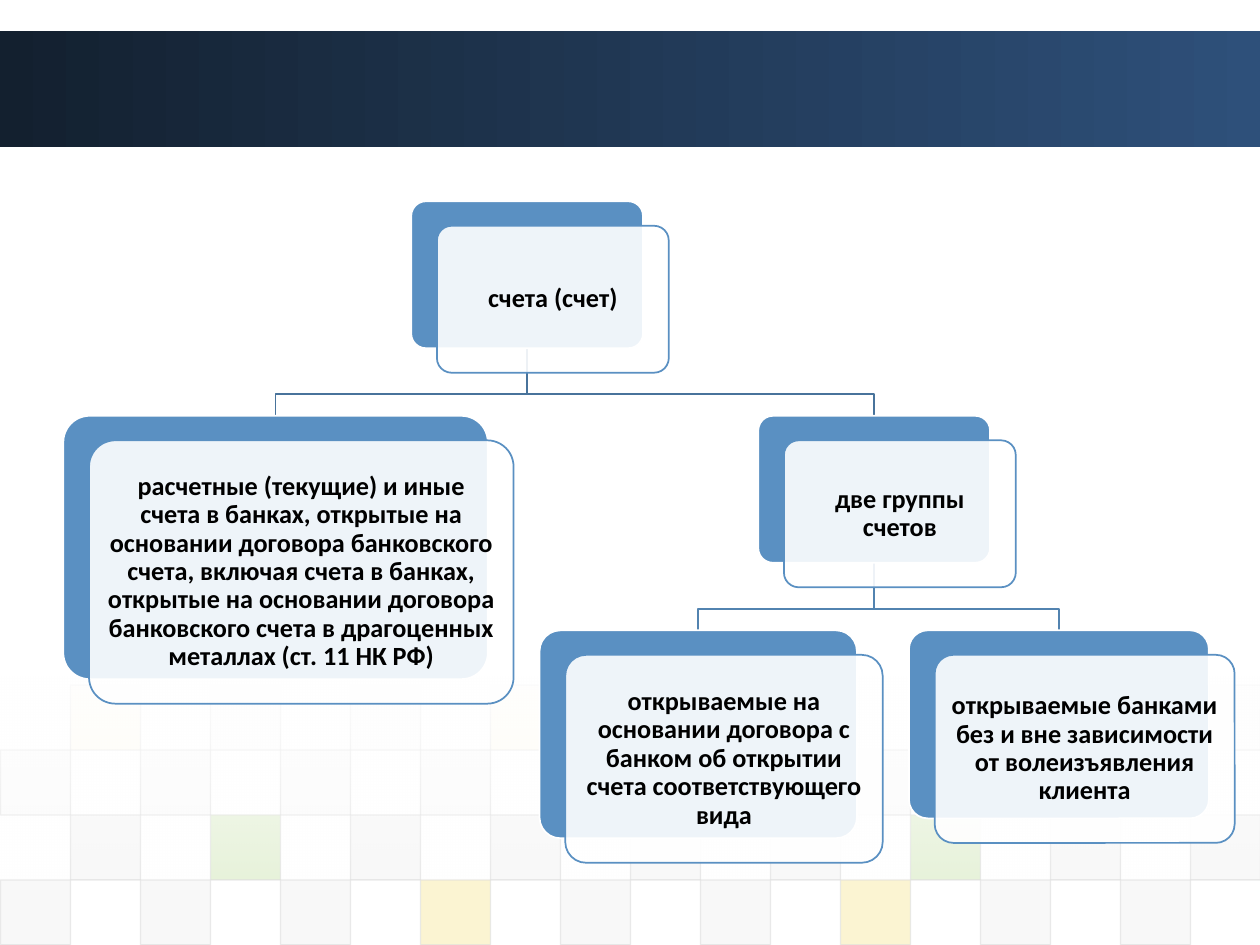
import pptx
import pptx.dml.color
import pptx.enum.shapes
import pptx.enum.text
import pptx.oxml.ns
import pptx.util
from lxml import etree

Pt = pptx.util.Pt
qn = pptx.oxml.ns.qn
SHAPES = pptx.enum.shapes.MSO_SHAPE

COLORS = {
    "banner_dark": "13202F", "banner_light": "2E507A",
    "gray": "DDDDDD", "pale": "EAEAEA", "green": "8AC246", "yellow": "EFC821",
    "white": "FFFFFF", "black": "000000", "blue": "5A90C2",
    "upper_link": "48739B", "lower_link": "5283B0",
}

# Background tiles: top, opacity, usual colour, columns, colours of special columns
TILE_WIDTH, TILE_HEIGHT = 40, 37.1
TILE_ROWS = [
    (391.5, 5, "pale", (1, 3, 5, 7, 13, 17), {1: "yellow", 7: "yellow"}),
    (428.6, 10, "gray", (0, 2, 4, 6, 12), {}),
    (465.7, 20, "gray", range(1, 18, 2), {3: "green", 13: "green"}),
    (502.8, 20, "gray", range(0, 17, 2), {6: "yellow", 12: "yellow"}),
]

# Cards: left, top, width, height of the back plate, and the wording
CARDS = {
    "accounts": (235, 115, 132.5, 84, "счета (счет)"),
    "settlement": (36.2, 237.6, 242.6, 150.5,
                   "расчетные (текущие) и иные счета в банках, открытые на основании "
                   "договора банковского счета, включая счета в банках, открытые на "
                   "основании договора банковского счета в драгоценных металлах "
                   "(ст. 11 НК РФ)"),
    "groups": (433.3, 237.6, 132.5, 84, "две группы счетов"),
    "by_contract": (308.3, 360.2, 181.4, 118.8,
                    "открываемые на основании договора с банком об открытии счета "
                    "соответствующего вида"),
    "by_bank": (519.4, 360.2, 171.4, 107.5,
                "открываемые банками без и вне зависимости от волеизъявления клиента"),
}
LINKS = [
    ("groups", "by_bank", "lower_link"),
    ("groups", "by_contract", "lower_link"),
    ("accounts", "groups", "upper_link"),
    ("accounts", "settlement", "upper_link"),
]
CARD_SHIFT = (14.7, 14)
BEND_GAP = 12.25


def rgb(name):
    return pptx.dml.color.RGBColor.from_string(COLORS[name])


def set_opacity(color_element, percent):
    etree.SubElement(color_element, qn("a:alpha")).set("val", str(percent * 1000))


def add_plate(slide, kind, left, top, width, height, fill=None, opacity=100,
              line=None, line_width=1, line_opacity=100):
    shape = slide.shapes.add_shape(kind, Pt(left), Pt(top), Pt(width), Pt(height))
    shape.shadow.inherit = False
    properties = shape.element.spPr
    if fill:
        shape.fill.solid()
        shape.fill.fore_color.rgb = rgb(fill)
        if opacity < 100:
            set_opacity(properties.find(qn("a:solidFill"))[0], opacity)
    if line:
        shape.line.color.rgb = rgb(line)
        shape.line.width = Pt(line_width)
        if line_opacity < 100:
            set_opacity(properties.find(qn("a:ln")).find(qn("a:solidFill"))[0], line_opacity)
    else:
        shape.line.fill.background()
    return shape


def add_gradient(slide, left, top, width, height, colors, angle, opacities=(100, 100)):
    shape = add_plate(slide, SHAPES.RECTANGLE, left, top, width, height)
    shape.fill.gradient()
    shape.fill.gradient_angle = angle
    for stop, color, position in zip(shape.fill.gradient_stops, colors, (0, 1)):
        stop.color.rgb = rgb(color)
        stop.position = position
    color_elements = shape.element.spPr.find(qn("a:gradFill")).iter(qn("a:srgbClr"))
    for color_element, opacity in zip(list(color_elements), opacities):
        if opacity < 100:
            set_opacity(color_element, opacity)


def write_text(shape, text, size=15, color="black", bold=True, font="Calibri", inset=5):
    frame = shape.text_frame
    frame.word_wrap = True
    frame.vertical_anchor = pptx.enum.text.MSO_ANCHOR.MIDDLE
    frame.margin_left = frame.margin_right = Pt(inset)
    frame.margin_top = frame.margin_bottom = Pt(inset)
    paragraph = frame.paragraphs[0]
    paragraph.alignment = pptx.enum.text.PP_ALIGN.CENTER
    paragraph.line_spacing = 0.9
    run = paragraph.add_run()
    run.text = text
    run.font.name = font
    run.font.size = Pt(size)
    run.font.bold = bold
    run.font.color.rgb = rgb(color)


def add_tiles(slide):
    for top, opacity, usual, columns, special in TILE_ROWS:
        for column in columns:
            add_plate(slide, SHAPES.RECTANGLE, column * TILE_WIDTH + 0.3, top,
                      TILE_WIDTH, TILE_HEIGHT, fill=special.get(column, usual),
                      opacity=opacity, line="gray", line_width=0.75, line_opacity=60)


def add_link(slide, parent, child, color):
    left, top, width, height, _ = CARDS[parent]
    start_x, start_y = left + width / 2, top + height
    left, end_y, width, _, _ = CARDS[child]
    end_x, bend_y = left + width / 2, end_y - BEND_GAP
    builder = slide.shapes.build_freeform(Pt(start_x), Pt(start_y))
    corners = [(start_x, bend_y), (end_x, bend_y), (end_x, end_y)]
    builder.add_line_segments([(Pt(x), Pt(y)) for x, y in corners], close=False)
    shape = builder.convert_to_shape()
    shape.shadow.inherit = False
    shape.fill.background()
    shape.line.color.rgb = rgb(color)
    shape.line.width = Pt(1)


def add_card(slide, left, top, width, height, text):
    back = add_plate(slide, SHAPES.ROUNDED_RECTANGLE, left, top, width, height,
                     fill="blue", line="white")
    front = add_plate(slide, SHAPES.ROUNDED_RECTANGLE, left + CARD_SHIFT[0],
                      top + CARD_SHIFT[1], width, height,
                      fill="white", opacity=90, line="blue")
    back.adjustments[0] = front.adjustments[0] = 0.1
    write_text(front, text)


def main():
    presentation = pptx.Presentation()
    presentation.slide_width, presentation.slide_height = Pt(720), Pt(540)
    slide = presentation.slides.add_slide(presentation.slide_layouts[6])

    # Banner, tiles and the veil that fades them
    add_gradient(slide, 0, 18, 720, 66, ("banner_dark", "banner_light"), 0)
    add_tiles(slide)
    add_gradient(slide, 0, 386.6, 720, 116.6, ("white", "white"), 270, (90, 0))

    # Hierarchy of accounts
    for parent, child, color in LINKS:
        add_link(slide, parent, child, color)
    for card in CARDS.values():
        add_card(slide, *card)

    presentation.save("out.pptx")


if __name__ == "__main__":
    main()
